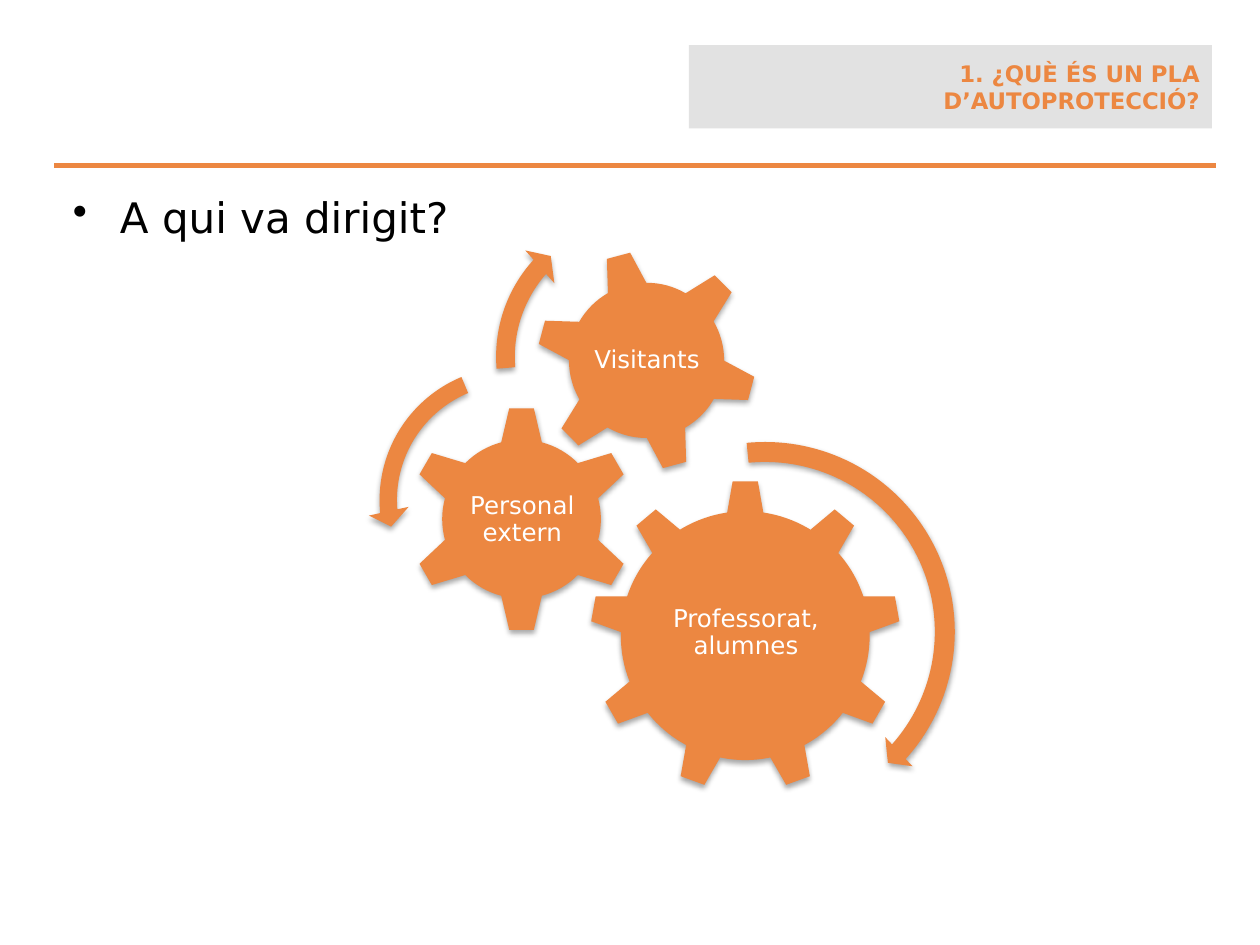
import lxml.etree
import pptx
import pptx.dml.color
import pptx.enum.shapes
import pptx.enum.text
import pptx.oxml
import pptx.oxml.ns
import pptx.util

Cm = pptx.util.Cm
Pt = pptx.util.Pt
MSO_SHAPE = pptx.enum.shapes.MSO_SHAPE
ALIGN = pptx.enum.text.PP_ALIGN
ANCHOR = pptx.enum.text.MSO_ANCHOR
qn = pptx.oxml.ns.qn

ORANGE = pptx.dml.color.RGBColor(0xEC, 0x87, 0x41)
GREY = pptx.dml.color.RGBColor(0xE2, 0xE2, 0xE2)
WHITE = pptx.dml.color.RGBColor(0xFF, 0xFF, 0xFF)
BLACK = pptx.dml.color.RGBColor(0x00, 0x00, 0x00)
FONT = "DejaVu Sans"

SHADOW = (
    '<a:effectLst xmlns:a="http://schemas.openxmlformats.org/drawingml/2006/main">'
    '<a:outerShdw blurRad="40000" dist="23000" dir="5400000" rotWithShape="0">'
    '<a:srgbClr val="000000"><a:alpha val="35000"/></a:srgbClr>'
    '</a:outerShdw></a:effectLst>'
)

GEARS = [
    (MSO_SHAPE.GEAR_9, (11.89, 9.68, 6.27), 0,
     "Professorat, alumnes", (13.16, 11.15, 3.76, 3.23)),
    (MSO_SHAPE.GEAR_6, (8.23, 8.18, 4.57), 0,
     "Personal extern", (9.4, 9.35, 2.26, 2.26)),
    (MSO_SHAPE.GEAR_6, (10.8, 5.03, 4.47), 345,
     "Visitants", (11.79, 6.02, 2.51, 2.51)),
]
ARROWS = [
    (MSO_SHAPE.CIRCULAR_ARROW, (11.4, 8.71, 8.05),
     (0.05, 2.99, 25.14, 158.65, 0.05)),
    (MSO_SHAPE.LEFT_CIRCULAR_ARROW, (7.42, 7.16, 5.84),
     (0.06, 4.3, 104.89, 148.38, 0.07)),
    (MSO_SHAPE.CIRCULAR_ARROW, (9.75, 4.04, 6.3),
     (0.06, 3.94, 133.14, 105.08, 0.07)),
]


def set_text(sp, text, size, color, align, anchor, bold=False):
    tf = sp.text_frame
    tf.word_wrap = True
    tf.vertical_anchor = anchor
    p = tf.paragraphs[0]
    p.text = text
    p.alignment = align
    p.font.name = FONT
    p.font.size = Pt(size)
    p.font.bold = bold
    p.font.color.rgb = color
    return tf


def add_filled(s, kind, box, color):
    sp = s.shapes.add_shape(kind, *map(Cm, box))
    sp.shadow.inherit = False
    sp.fill.solid()
    sp.fill.fore_color.rgb = color
    sp.line.fill.background()
    return sp


def add_shadowed(s, kind, left, top, size):
    sp = add_filled(s, kind, (left, top, size, size), ORANGE)
    sp_pr = sp._element.spPr
    sp_pr.replace(sp_pr.find(qn("a:effectLst")), pptx.oxml.parse_xml(SHADOW))
    return sp


def add_gear(s, kind, place, rotation, label, label_box):
    add_shadowed(s, kind, *place).rotation = rotation
    tb = s.shapes.add_textbox(*map(Cm, label_box))
    tf = set_text(tb, label, 14, WHITE, ALIGN.CENTER, ANCHOR.MIDDLE)
    tf.margin_left = tf.margin_right = tf.margin_top = tf.margin_bottom = Cm(0.05)
    tf.paragraphs[0].line_spacing = 0.9


def add_arrow(s, kind, place, adjustments):
    sp = add_shadowed(s, kind, *place)
    for i, value in enumerate(adjustments):
        sp.adjustments[i] = value


def add_rule(s):
    line = s.shapes.add_connector(
        pptx.enum.shapes.MSO_CONNECTOR.STRAIGHT, Cm(1.09), Cm(3.33), Cm(24.51), Cm(3.33))
    line.line.color.rgb = ORANGE
    line.line.width = Pt(3)
    lxml.etree.SubElement(line._element.spPr, qn("a:effectLst"))


def add_question(s):
    tb = s.shapes.add_textbox(Cm(1.22), Cm(3.73), Cm(23.06), Cm(13.79))
    p_pr = tb.text_frame.paragraphs[0]._p.get_or_add_pPr()
    p_pr.set("marL", str(Cm(0.95)))
    p_pr.set("indent", str(-Cm(0.95)))
    lxml.etree.SubElement(p_pr, qn("a:buChar")).set("char", "•")
    set_text(tb, "A qui va dirigit?", 24, BLACK, ALIGN.LEFT, ANCHOR.TOP)


def add_heading(s):
    sp = add_filled(s, MSO_SHAPE.RECTANGLE, (13.89, 0.91, 10.54, 1.68), GREY)
    set_text(sp, "1. ¿QUÈ ÉS UN PLA D’AUTOPROTECCIÓ?", 13, ORANGE,
             ALIGN.RIGHT, ANCHOR.MIDDLE, bold=True)


def main():
    prs = pptx.Presentation()
    prs.slide_width, prs.slide_height = Cm(25.4), Cm(19.05)
    s = prs.slides.add_slide(prs.slide_layouts[6])
    add_rule(s)
    for gear in GEARS:
        add_gear(s, *gear)
    for arrow in ARROWS:
        add_arrow(s, *arrow)
    add_question(s)
    add_heading(s)
    prs.save("out.pptx")


if __name__ == "__main__":
    main()
